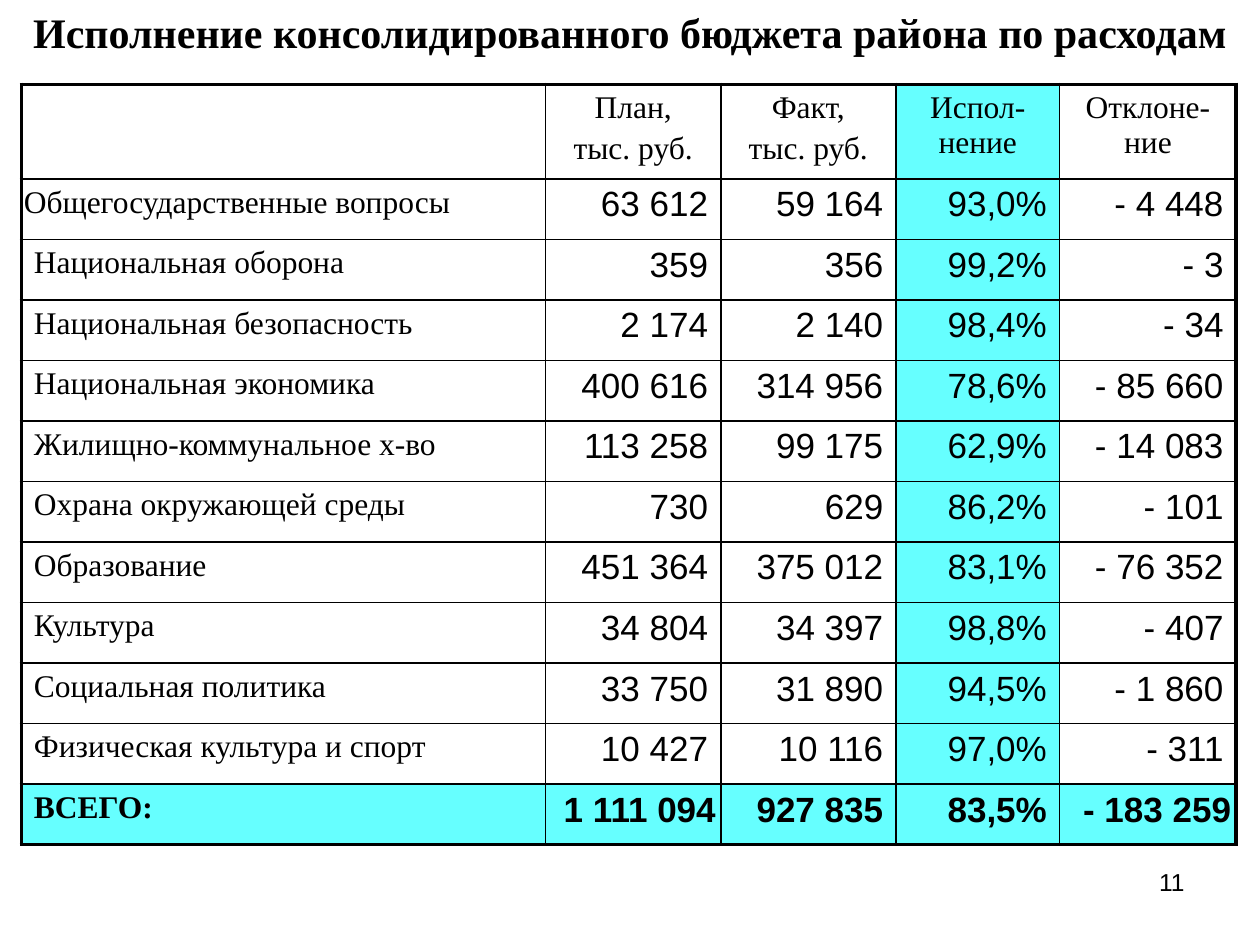
from dataclasses import dataclass

from lxml.etree import SubElement
from pptx import Presentation
from pptx.dml.color import RGBColor
from pptx.enum.text import MSO_ANCHOR, MSO_AUTO_SIZE, PP_ALIGN
from pptx.oxml.ns import qn
from pptx.util import Cm, Pt


@dataclass(frozen=True)
class Theme:
    ink: str = "000000"
    paper: str = "FFFFFF"
    accent: str = "66FFFF"
    serif: str = "Times New Roman"
    sans: str = "Arial"
    title_size: float = 24
    label_size: float = 18
    value_size: float = 20
    page_size: float = 14
    inner_line: float = 1
    outer_line: float = 2.25
    space_ratio: float = 0.2


HEADINGS = ["", "План,\nтыс. руб.", "Факт,\nтыс. руб.", "Испол-нение", "Отклоне-ние"]
EXPENSES = [
    ["Общегосударственные вопросы", "63 612", "59 164", "93,0%", "- 4 448"],
    ["Национальная оборона", "359", "356", "99,2%", "- 3"],
    ["Национальная безопасность", "2 174", "2 140", "98,4%", "- 34"],
    ["Национальная экономика", "400 616", "314 956", "78,6%", "- 85 660"],
    ["Жилищно-коммунальное х-во", "113 258", "99 175", "62,9%", "- 14 083"],
    ["Охрана окружающей среды", "730", "629", "86,2%", "- 101"],
    ["Образование", "451 364", "375 012", "83,1%", "- 76 352"],
    ["Культура", "34 804", "34 397", "98,8%", "- 407"],
    ["Социальная политика", "33 750", "31 890", "94,5%", "- 1 860"],
    ["Физическая культура и спорт", "10 427", "10 116", "97,0%", "- 311"],
    ["ВСЕГО:", "1 111 094", "927 835", "83,5%", "- 183 259"],
]
COLUMN_WIDTHS = [10.57, 3.53, 3.53, 3.3, 3.56]
HEADING_HEIGHT, EXPENSE_HEIGHT = 1.77, 1.22
EXECUTION_COLUMN = 3
# Side margins of the cells whose text needs more room, by (row, column)
TIGHT_MARGINS = {(1, 0): 0.05, (11, 1): 0.1, (11, 4): 0.1}


class BudgetSlide:
    def __init__(self, presentation, theme):
        self.theme = theme
        self.slide = presentation.slides.add_slide(presentation.slide_layouts[5])

    def add_text(self, frame, text, font, size, align, bold=False, spaced=False):
        """Fill a text frame, one paragraph for each line of the text."""
        for number, line in enumerate(text.split("\n")):
            paragraph = frame.add_paragraph() if number else frame.paragraphs[0]
            paragraph.alignment = align
            if spaced:
                paragraph.space_before = Pt(size * self.theme.space_ratio)
            run = paragraph.add_run()
            run.text = line
            run.font.name = font
            run.font.size = Pt(size)
            run.font.bold = bold
            run.font.color.rgb = RGBColor.from_string(self.theme.ink)

    def title(self, text):
        heading = self.slide.shapes.title
        heading.left, heading.top = Cm(0), Cm(0)
        heading.width, heading.height = Cm(25.4), Cm(1.27)
        frame = heading.text_frame
        frame.auto_size = MSO_AUTO_SIZE.NONE
        frame.vertical_anchor = MSO_ANCHOR.MIDDLE
        self.add_text(frame, text, self.theme.serif, self.theme.title_size,
                      PP_ALIGN.CENTER, bold=True)

    def page_number(self, text):
        corner = self.slide.shapes.add_textbox(Cm(18.2), Cm(17.35), Cm(5.93), Cm(1.32))
        corner.text_frame.word_wrap = True
        self.add_text(corner.text_frame, text, self.theme.sans, self.theme.page_size,
                      PP_ALIGN.RIGHT)

    def borders(self, cell, outer_sides):
        """Draw all four borders, the outer sides (of L, R, T, B) thicker."""
        properties = cell._tc.get_or_add_tcPr()
        for position, side in enumerate("LRTB"):
            points = self.theme.outer_line if side in outer_sides else self.theme.inner_line
            line = SubElement(properties, qn(f"a:ln{side}"), w=str(Pt(points)))
            fill = SubElement(line, qn("a:solidFill"))
            SubElement(fill, qn("a:srgbClr"), val=self.theme.ink)
            properties.insert(position, line)

    def table(self, rows):
        theme = self.theme
        heights = [HEADING_HEIGHT] + [EXPENSE_HEIGHT] * (len(rows) - 1)
        table = self.slide.shapes.add_table(
            len(rows), len(COLUMN_WIDTHS), Cm(0.43), Cm(1.7),
            Cm(sum(COLUMN_WIDTHS)), Cm(sum(heights))).table
        table.first_row = table.horz_banding = False
        for column, width in zip(table.columns, COLUMN_WIDTHS):
            column.width = Cm(width)
        for row, height in zip(table.rows, heights):
            row.height = Cm(height)

        last_row, last_column = len(rows) - 1, len(COLUMN_WIDTHS) - 1
        for r, texts in enumerate(rows):
            for c, text in enumerate(texts):
                cell = table.cell(r, c)
                is_total = r == last_row
                highlighted = is_total or c == EXECUTION_COLUMN
                cell.fill.solid()
                cell.fill.fore_color.rgb = RGBColor.from_string(
                    theme.accent if highlighted else theme.paper)
                outer = {"L": c == 0, "R": c == last_column, "T": r == 0, "B": is_total}
                self.borders(cell, [side for side, is_outer in outer.items() if is_outer])
                if (r, c) in TIGHT_MARGINS:
                    cell.margin_left = cell.margin_right = Cm(TIGHT_MARGINS[r, c])
                if r == 0:
                    style = theme.serif, theme.label_size, PP_ALIGN.CENTER
                elif c == 0:
                    style = theme.serif, theme.label_size, PP_ALIGN.LEFT
                else:
                    style = theme.sans, theme.value_size, PP_ALIGN.RIGHT
                if text:
                    self.add_text(cell.text_frame, text, *style, bold=is_total, spaced=True)


def main():
    presentation = Presentation()
    presentation.slide_width, presentation.slide_height = Cm(25.4), Cm(19.05)
    budget = BudgetSlide(presentation, Theme())
    budget.page_number("11")
    budget.title("Исполнение консолидированного бюджета района по расходам")
    budget.table([HEADINGS] + EXPENSES)
    presentation.save("out.pptx")


if __name__ == "__main__":
    main()
